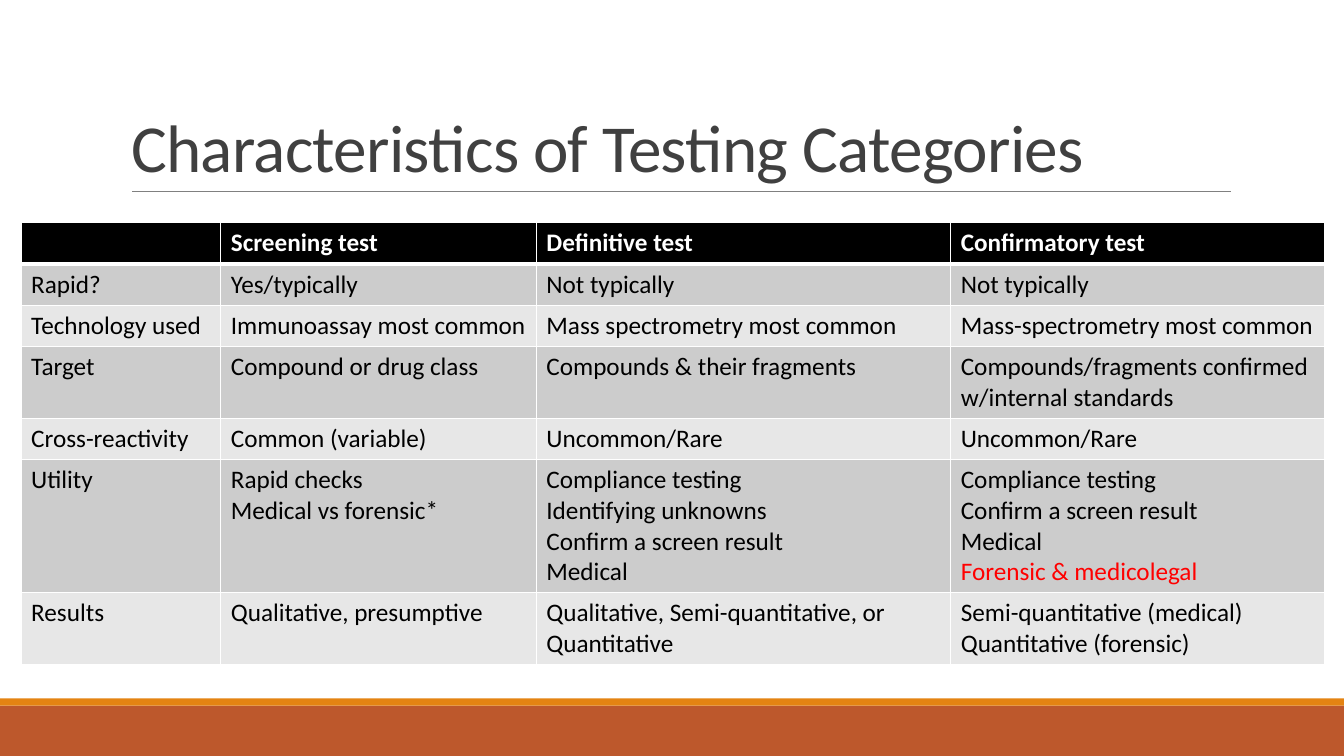
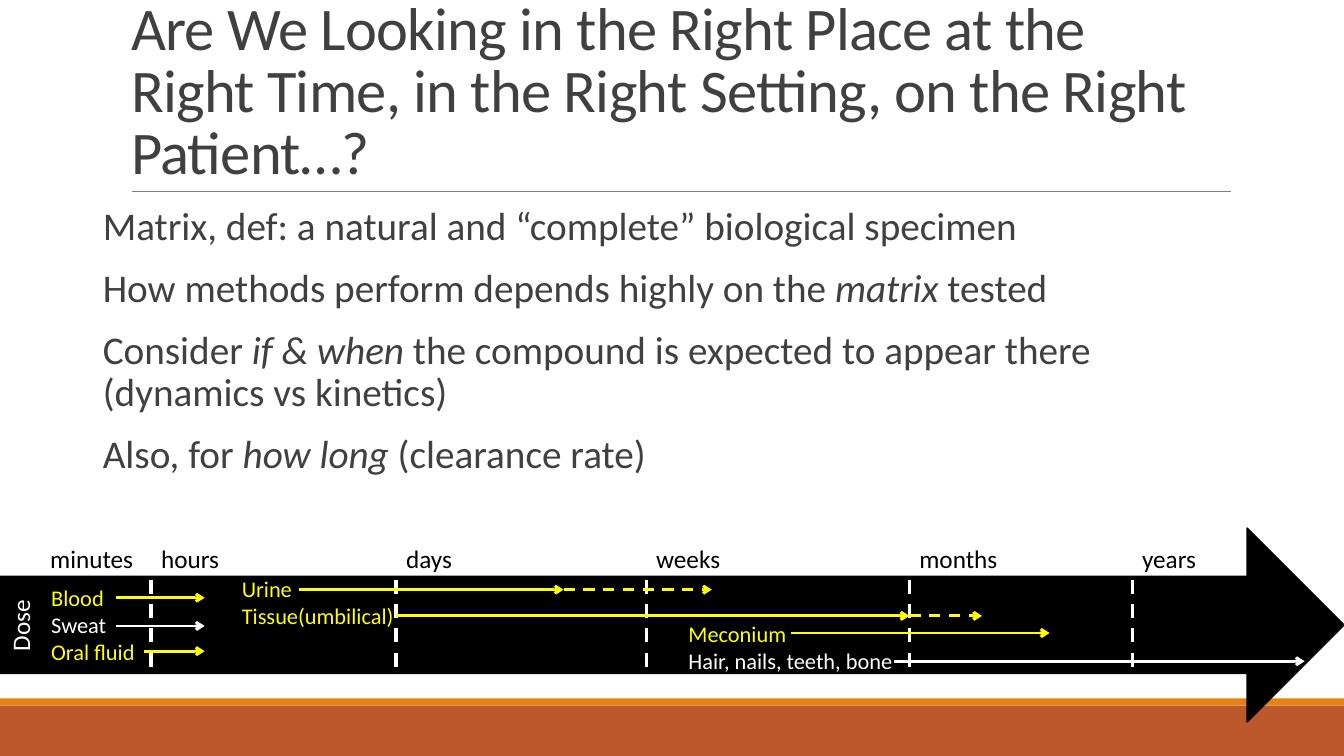
from dataclasses import dataclass
from typing import NamedTuple, Optional

from lxml import etree
from pptx import Presentation
from pptx.dml.color import RGBColor
from pptx.enum import dml, shapes, text
from pptx.oxml import ns
from pptx.util import Inches, Pt


@dataclass(frozen=True)
class Theme:
    font: str = "Calibri"
    ink: str = "404040"
    black: str = "000000"
    white: str = "FFFFFF"
    red: str = "FF0000"
    yellow: str = "FFFF00"
    rust: str = "BD582C"
    orange: str = "E48312"
    rule: str = "808080"
    row_dark: str = "CCCCCC"
    row_light: str = "E7E7E7"
    title_size: float = 48
    long_title_size: float = 43.2
    body_size: float = 28
    text_size: float = 18
    small_size: float = 16


THEME = Theme()


class Frame(NamedTuple):
    left: float
    top: float
    width: float
    height: float

    def lengths(self):
        return tuple(Inches(value) for value in self)


class Row(NamedTuple):
    height: float
    cells: tuple[str, ...]


class Era(NamedTuple):
    label: str
    left: float
    width: float
    tick: bool = True


class Entry(NamedTuple):
    label: str
    color: str


class Specimens(NamedTuple):
    frame: Frame
    entries: tuple[Entry, ...]


class Span(NamedTuple):
    """A detection window on the timeline."""
    start: float
    end: float
    level: float
    color: str = THEME.yellow
    dashed: bool = False


ROWS = (
    Row(0.41, ("", "Screening test", "Definitive test", "Confirmatory test")),
    Row(0.41, ("Rapid?", "Yes/typically", "Not typically", "Not typically")),
    Row(0.41, ("Technology used", "Immunoassay most common",
               "Mass spectrometry most common", "Mass-spectrometry most common")),
    Row(0.7, ("Target", "Compound or drug class", "Compounds & their fragments",
              "Compounds/fragments confirmed w/internal standards")),
    Row(0.41, ("Cross-reactivity", "Common (variable)", "Uncommon/Rare", "Uncommon/Rare")),
    Row(1.32, ("Utility", "Rapid checks\nMedical vs forensic*",
               "Compliance testing\nIdentifying unknowns\nConfirm a screen result\nMedical",
               "Compliance testing\nConfirm a screen result\nMedical\nForensic & medicolegal")),
    Row(0.7, ("Results", "Qualitative, presumptive",
              "Qualitative, Semi-quantitative, or\nQuantitative",
              "Semi-quantitative (medical)\nQuantitative (forensic)")),
)
COLUMN_WIDTHS = (1.98, 3.13, 4.11, 3.71)
HIGHLIGHT = "Forensic & medicolegal"

# Every second piece of a point is italic.
POINTS = (
    ("Matrix, def: a natural and “complete” biological specimen",),
    ("How methods perform depends highly on the ", "matrix", " tested"),
    ("Consider ", "if & when ",
     "the compound is expected to appear there (dynamics vs kinetics)"),
    ("Also, for ", "how long ", "(clearance rate)"),
)

ERAS = (
    Era("minutes", 0.4, 1.03, tick=False),
    Era("hours", 1.5, 0.78),
    Era("days", 3.93, 0.66),
    Era("weeks", 6.41, 0.84),
    Era("months", 9.02, 0.98),
    Era("years", 11.23, 0.74),
)
SPECIMENS = (
    Specimens(Frame(0.41, 5.75, 1.04, 0.91),
              (Entry("Blood", THEME.yellow), Entry("Sweat", THEME.white),
               Entry("Oral fluid", THEME.yellow))),
    Specimens(Frame(2.3, 5.66, 1.74, 0.64),
              (Entry("Urine", THEME.yellow), Entry("Tissue(umbilical)", THEME.yellow))),
    Specimens(Frame(6.73, 6.1, 2.25, 0.64),
              (Entry("Meconium", THEME.yellow),
               Entry("Hair, nails, teeth, bone", THEME.white))),
)
SPANS = (
    Span(1.15, 2.03, 5.93),
    Span(1.15, 2.03, 6.21, THEME.white),
    Span(1.43, 2.03, 6.46),
    Span(8.87, 12.94, 6.56, THEME.white),
    Span(7.85, 10.41, 6.28),
    Span(2.97, 5.59, 5.85),
    Span(5.59, 7.06, 5.85, dashed=True),
    Span(3.93, 9.02, 6.11),
    Span(9.02, 9.74, 6.11, dashed=True),
)


def rgb(color: str) -> RGBColor:
    return RGBColor.from_string(color)


def style_para(para, size: float, color: str, bold: bool = False) -> None:
    for run in para.runs:
        run.font.name = THEME.font
        run.font.size = Pt(size)
        run.font.bold = bold
        run.font.color.rgb = rgb(color)


def place(shape, frame: Frame) -> None:
    shape.left, shape.top, shape.width, shape.height = frame.lengths()


def add_block(page, kind, frame: Frame, color: str, outline: Optional[float] = None):
    block = page.shapes.add_shape(kind, *frame.lengths())
    block.shadow.inherit = False
    block.fill.solid()
    block.fill.fore_color.rgb = rgb(color)
    if outline is None:
        block.line.fill.background()
    else:
        block.line.color.rgb = rgb(color)
        block.line.width = Pt(outline)
    return block


def add_line(page, start: tuple[float, float], end: tuple[float, float], color: str,
             width: float, dashed: bool = False, arrow: bool = False):
    line = page.shapes.add_connector(
        shapes.MSO_CONNECTOR.STRAIGHT, *(Inches(value) for value in start + end))
    line.line.color.rgb = rgb(color)
    line.line.width = Pt(width)
    if dashed:
        line.line.dash_style = dml.MSO_LINE.DASH
    properties = line.element.spPr
    if arrow:
        etree.SubElement(properties.find(ns.qn("a:ln")), ns.qn("a:tailEnd"), type="arrow")
    etree.SubElement(properties, ns.qn("a:effectLst"))
    return line


def add_label(page, frame: Frame, entries: tuple[Entry, ...], size: float):
    box = page.shapes.add_textbox(*frame.lengths())
    box.text_frame.text = "\n".join(entry.label for entry in entries)
    box.text_frame.word_wrap = False
    box.text_frame.auto_size = text.MSO_AUTO_SIZE.SHAPE_TO_FIT_TEXT
    for para, entry in zip(box.text_frame.paragraphs, entries):
        style_para(para, size, entry.color)
    return box


def decorate_master(deck, page) -> None:
    """Draw the bands and title rule, then move them to the slide master."""
    rectangle = shapes.MSO_SHAPE.RECTANGLE
    parts = (
        add_block(page, rectangle, Frame(0, 7, 13.33, 0.5), THEME.rust),
        add_block(page, rectangle, Frame(0, 6.93, 13.33, 0.07), THEME.orange),
        add_line(page, (1.31, 1.9), (12.21, 1.9), THEME.rule, 0.5),
    )
    for number, part in enumerate(parts, start=100):
        part.element.xpath(".//p:cNvPr")[0].set("id", str(number))
        deck.slide_master.shapes.element.append(part.element)


def add_page(deck, layout: int, heading: str, size: float):
    page = deck.slides.add_slide(deck.slide_layouts[layout])
    title = page.shapes.title
    place(title, Frame(1.2, 0.31, 11, 1.59))
    frame = title.text_frame
    frame.text = heading
    frame.word_wrap = True
    frame.auto_size = text.MSO_AUTO_SIZE.NONE
    frame.vertical_anchor = text.MSO_ANCHOR.BOTTOM
    para = frame.paragraphs[0]
    para.alignment = text.PP_ALIGN.LEFT
    para.line_spacing = 0.85
    style_para(para, size, THEME.ink)
    for run in para.runs:
        run.font.element.set("spc", "-50") if hasattr(run.font, "element") else \
            run._r.get_or_add_rPr().set("spc", "-50")
    return page


def set_borders(cell, bottom: float) -> None:
    properties = cell._tc.get_or_add_tcPr()
    for index, (side, width) in enumerate(
            (("lnL", 1), ("lnR", 1), ("lnT", 1), ("lnB", bottom))):
        border = etree.Element(ns.qn(f"a:{side}"), w=str(Pt(width)))
        fill = etree.SubElement(border, ns.qn("a:solidFill"))
        etree.SubElement(fill, ns.qn("a:srgbClr"), val=THEME.white)
        properties.insert(index, border)


def add_comparison(page) -> None:
    frame = Frame(0.21, 2.21, sum(COLUMN_WIDTHS), sum(row.height for row in ROWS))
    table = page.shapes.add_table(len(ROWS), len(COLUMN_WIDTHS), *frame.lengths()).table
    for column, width in zip(table.columns, COLUMN_WIDTHS):
        column.width = Inches(width)
    for index, row in enumerate(ROWS):
        header = index == 0
        band = THEME.row_dark if index % 2 else THEME.row_light
        table.rows[index].height = Inches(row.height)
        for cell, words in zip(table.rows[index].cells, row.cells):
            cell.text_frame.text = words
            cell.fill.solid()
            cell.fill.fore_color.rgb = rgb(THEME.black if header else band)
            set_borders(cell, 3 if header else 1)
            for para in cell.text_frame.paragraphs:
                color = THEME.white if header else THEME.black
                if para.text == HIGHLIGHT:
                    color = THEME.red
                style_para(para, THEME.text_size, color, bold=header)


def fill_points(body) -> None:
    place(body, Frame(0.92, 2, 11.5, 5.36))
    frame = body.text_frame
    frame.word_wrap = True
    frame.auto_size = text.MSO_AUTO_SIZE.NONE
    frame.margin_left = frame.margin_right = 0
    for index, pieces in enumerate(POINTS):
        para = frame.add_paragraph() if index else frame.paragraphs[0]
        for number, piece in enumerate(pieces):
            run = para.add_run()
            run.text = piece
            run.font.italic = number % 2 == 1
        style_para(para, THEME.body_size, THEME.ink)
        para.line_spacing = 0.9
        para.space_before, para.space_after = Pt(12), Pt(2)
        properties = para._p.get_or_add_pPr()
        properties.set("marL", str(Inches(0.1)))
        properties.set("indent", "0")
        etree.SubElement(properties, ns.qn("a:buNone"))


def add_timeline(page) -> None:
    add_block(page, shapes.MSO_SHAPE.RIGHT_ARROW, Frame(0, 5.24, 13.33, 1.92),
              THEME.black, outline=1.25)
    dose = add_label(page, Frame(-0.16, 6, 0.72, 0.4),
                     (Entry("Dose", THEME.white),), THEME.text_size)
    dose.rotation = 270
    for era in ERAS:
        add_label(page, Frame(era.left, 5.34, era.width, 0.4),
                  (Entry(era.label, THEME.black),), THEME.text_size)
        if era.tick:
            add_line(page, (era.left, 5.75), (era.left, 6.69), THEME.white, 2.5, dashed=True)
    for group in SPECIMENS:
        add_label(page, group.frame, group.entries, THEME.small_size)
    for span in SPANS:
        add_line(page, (span.start, span.level), (span.end, span.level),
                 span.color, 2, span.dashed, arrow=True)


def main() -> None:
    deck = Presentation()
    deck.slide_width, deck.slide_height = Inches(13.33), Inches(7.5)
    page = add_page(deck, 5, "Characteristics of Testing Categories", THEME.title_size)
    decorate_master(deck, page)
    add_comparison(page)
    page = add_page(deck, 1, "Are We Looking in the Right Place at the Right Time, "
                    "in the Right Setting, on the Right Patient…?", THEME.long_title_size)
    fill_points(page.placeholders[1])
    add_timeline(page)
    deck.save("out.pptx")


if __name__ == "__main__":
    main()
